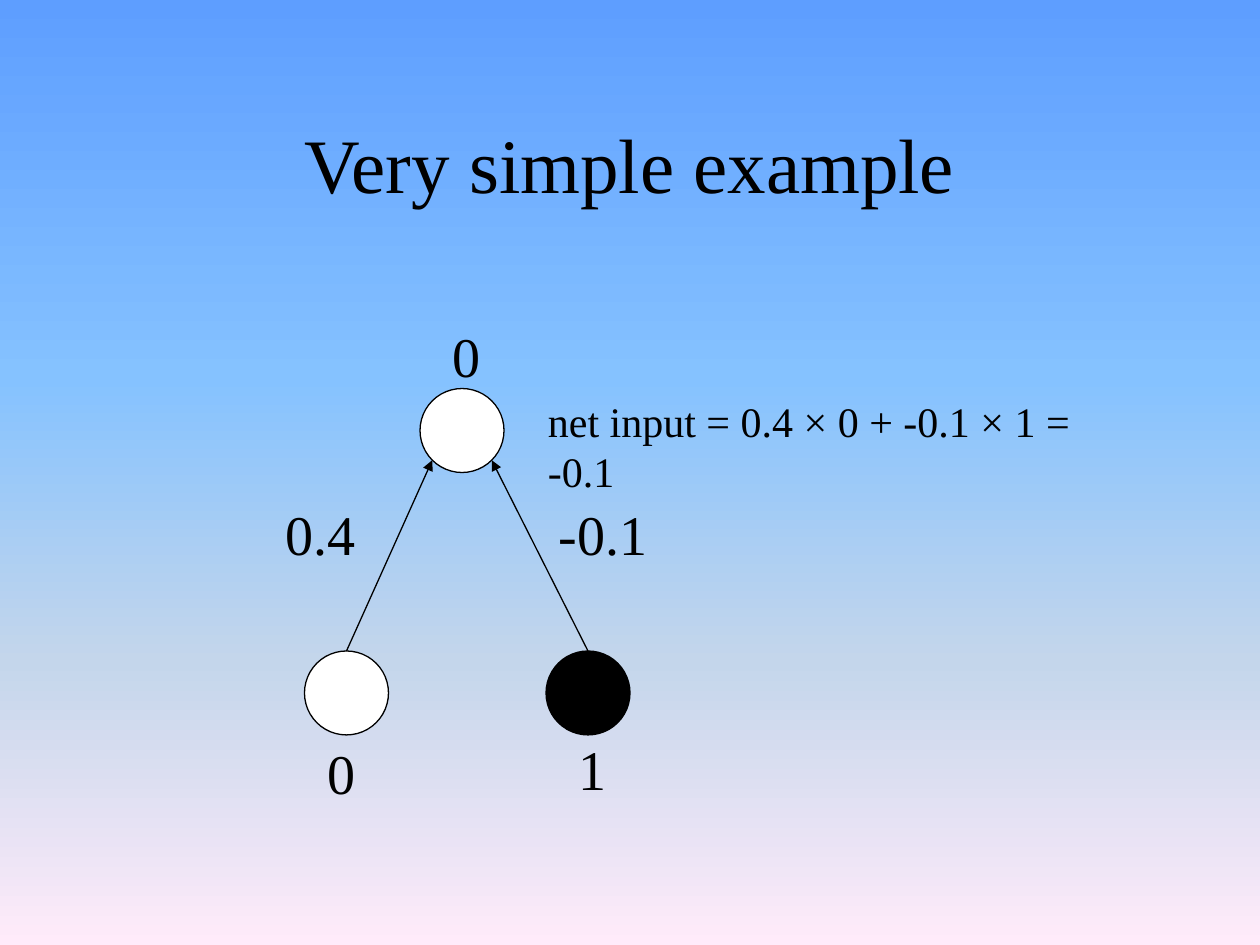
from lxml import etree
from pptx import Presentation
from pptx.dml.color import RGBColor
from pptx.enum.shapes import MSO_CONNECTOR as Connector, MSO_SHAPE as Shape
from pptx.enum.text import MSO_ANCHOR as Anchor, PP_ALIGN as Align
from pptx.oxml.ns import qn
from pptx.util import Pt

COLORS = {"black": "000000", "white": "FFFFFF"}
BACKGROUND_STOPS = [(0, "5E9EFF"), (40, "85C2FF"), (70, "C4D6EB"), (100, "FFEBFA")]
FONT = "Times New Roman"


def color(name):
    return RGBColor.from_string(COLORS[name])


def write(shape, text, size, **formats):
    """Put one paragraph of text into a shape and format it."""
    shape.text_frame.text = text
    paragraph = shape.text_frame.paragraphs[0]
    for name, value in formats.items():
        setattr(paragraph, name, value)
    for name, value in {"name": FONT, "size": Pt(size)}.items():
        setattr(paragraph.font, name, value)
    paragraph.font.color.rgb = color("black")


presentation = Presentation()
presentation.slide_width, presentation.slide_height = Pt(720), Pt(540)
slide = presentation.slides.add_slide(presentation.slide_layouts[5])

# Background gradient, from top to bottom
background = slide.background.fill
background.gradient()
background.gradient_angle = 270
stop_list = slide.background._cSld.find(".//" + qn("a:gsLst"))
for old_stop in list(stop_list):
    stop_list.remove(old_stop)
for percent, value in BACKGROUND_STOPS:
    stop = etree.SubElement(stop_list, qn("a:gs"), pos=str(percent * 1000))
    etree.SubElement(stop, qn("a:srgbClr"), val=value)

# Title
title = slide.shapes.title
title_box = {"left": 54, "top": 48, "width": 612, "height": 90}
for name, value in title_box.items():
    setattr(title, name, Pt(value))
write(title, "Very simple example", 44, alignment=Align.CENTER)
title.text_frame.vertical_anchor = Anchor.MIDDLE

# Units of the network: two inputs and one output
for left, top, fill in [(174, 372, "white"), (312, 372, "black"), (240, 222, "white")]:
    unit = slide.shapes.add_shape(Shape.OVAL, Pt(left), Pt(top), Pt(48), Pt(48))
    unit.shadow.inherit = False
    unit.fill.solid()
    unit.fill.fore_color.rgb = color(fill)
    unit.line.color.rgb = color("black")
    unit.line.width = Pt(0.75)

# Weighted connections from the inputs to the output
for start_x, end_x in [(198, 247), (336, 281)]:
    arrow = slide.shapes.add_connector(
        Connector.STRAIGHT, Pt(start_x), Pt(372), Pt(end_x), Pt(263))
    arrow.line.color.rgb = color("black")
    arrow.line.width = Pt(0.75)
    etree.SubElement(arrow.line._get_or_add_ln(), qn("a:tailEnd"), type="triangle")
    etree.SubElement(arrow._element.spPr, qn("a:effectLst"))

# Activations and weights
labels = [
    ("0", 180, 418.5, 30),
    ("1", 323.5, 416, 30),
    ("0", 251.5, 180, 30),
    ("-0.1", 312, 282, 65),
    ("0.4", 156, 282, 55),
]
for text, left, top, width in labels:
    label = slide.shapes.add_textbox(Pt(left), Pt(top), Pt(width), Pt(45))
    label.text_frame.word_wrap = False
    write(label, text, 32)

# Net input of the output unit
formula = slide.shapes.add_textbox(Pt(306), Pt(222), Pt(350), Pt(65))
formula.text_frame.word_wrap = True
write(formula, "net input = 0.4 × 0 + -0.1 × 1 = -0.1", 24, line_spacing=Pt(29))

presentation.save("out.pptx")
